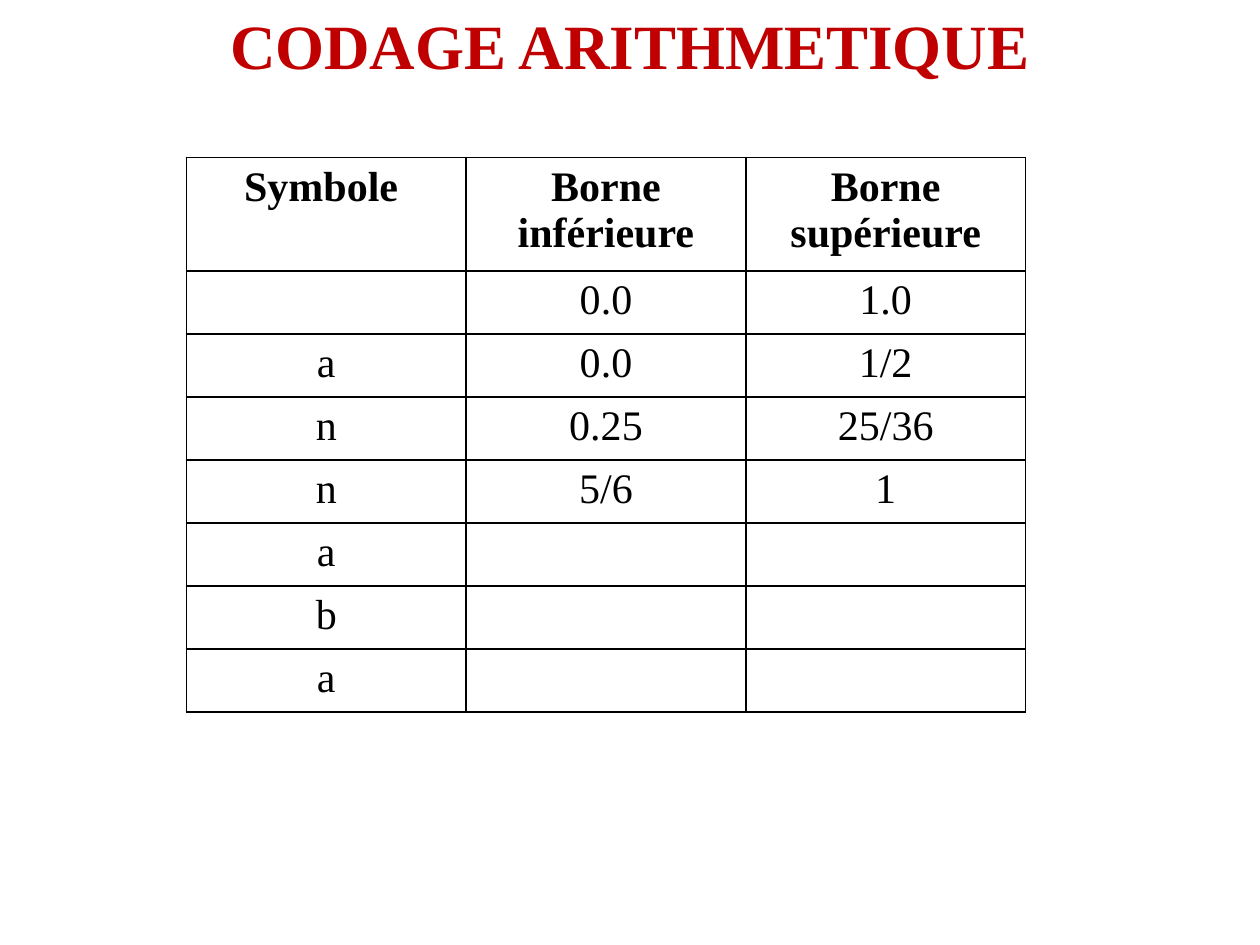
from lxml.etree import SubElement
from pptx import Presentation
from pptx.dml.color import RGBColor
from pptx.enum.text import MSO_ANCHOR as Anchor, PP_ALIGN as Align
from pptx.oxml.ns import qn
from pptx.util import Inches, Pt

RED = RGBColor(0xC0, 0x00, 0x00)
BLACK = RGBColor(0x00, 0x00, 0x00)
FONT = "Times New Roman"

COLUMN_WIDTH = Inches(2.22)
HEADER_HEIGHT = Inches(0.9)
ROW_HEIGHT = Inches(0.5)

ROWS = [
    ("Symbole ", "Borne inférieure", "Borne supérieure"),
    ("", "0.0", "1.0"),
    ("a", "0.0", "1/2"),
    ("n", "0.25", "25/36"),
    ("n", "5/6", "1"),
    ("a", "", ""),
    ("b", "", ""),
    ("a", "", ""),
]


def write(frame, text, size, color, bold=False):
    """Put one centred run into a text frame."""
    para = frame.paragraphs[0]
    para.alignment = Align.CENTER
    span = para.add_run()
    span.text = text
    span.font.name = FONT
    span.font.size = Pt(size)
    span.font.bold = bold
    span.font.color.rgb = color


def add_borders(cell):
    """Draw a thin black line on each side of a cell."""
    properties = cell._tc.get_or_add_tcPr()
    for side in ("a:lnL", "a:lnR", "a:lnT", "a:lnB"):
        line = SubElement(properties, qn(side), w=str(Pt(1)))
        fill = SubElement(line, qn("a:solidFill"))
        SubElement(fill, qn("a:srgbClr"), val=str(BLACK))


def add_title(page, deck, text):
    title = page.shapes.title
    title.left, title.top = 0, 0
    title.width, title.height = deck.slide_width, Inches(0.71)
    title.text_frame.vertical_anchor = Anchor.TOP
    write(title.text_frame, text, 36, RED, bold=True)


def add_bounds_table(page, left, top):
    columns = len(ROWS[0])
    height = HEADER_HEIGHT + ROW_HEIGHT * (len(ROWS) - 1)
    table = page.shapes.add_table(
        len(ROWS), columns, left, top, COLUMN_WIDTH * columns, height
    ).table
    table.horz_banding = False
    for column in table.columns:
        column.width = COLUMN_WIDTH

    for index, values in enumerate(ROWS):
        is_header = index == 0
        table.rows[index].height = HEADER_HEIGHT if is_header else ROW_HEIGHT
        for cell, value in zip(table.rows[index].cells, values):
            add_borders(cell)
            cell.fill.background()
            if value:
                write(cell.text_frame, value, 24, BLACK, bold=is_header)


def main():
    deck = Presentation()
    deck.slide_width, deck.slide_height = Inches(10), Inches(7.5)
    page = deck.slides.add_slide(deck.slide_layouts[5])

    # Heading
    add_title(page, deck, "CODAGE ARITHMETIQUE")

    # Interval bounds per symbol
    add_bounds_table(page, Inches(1.48), Inches(1.25))

    deck.save("out.pptx")


if __name__ == "__main__":
    main()
